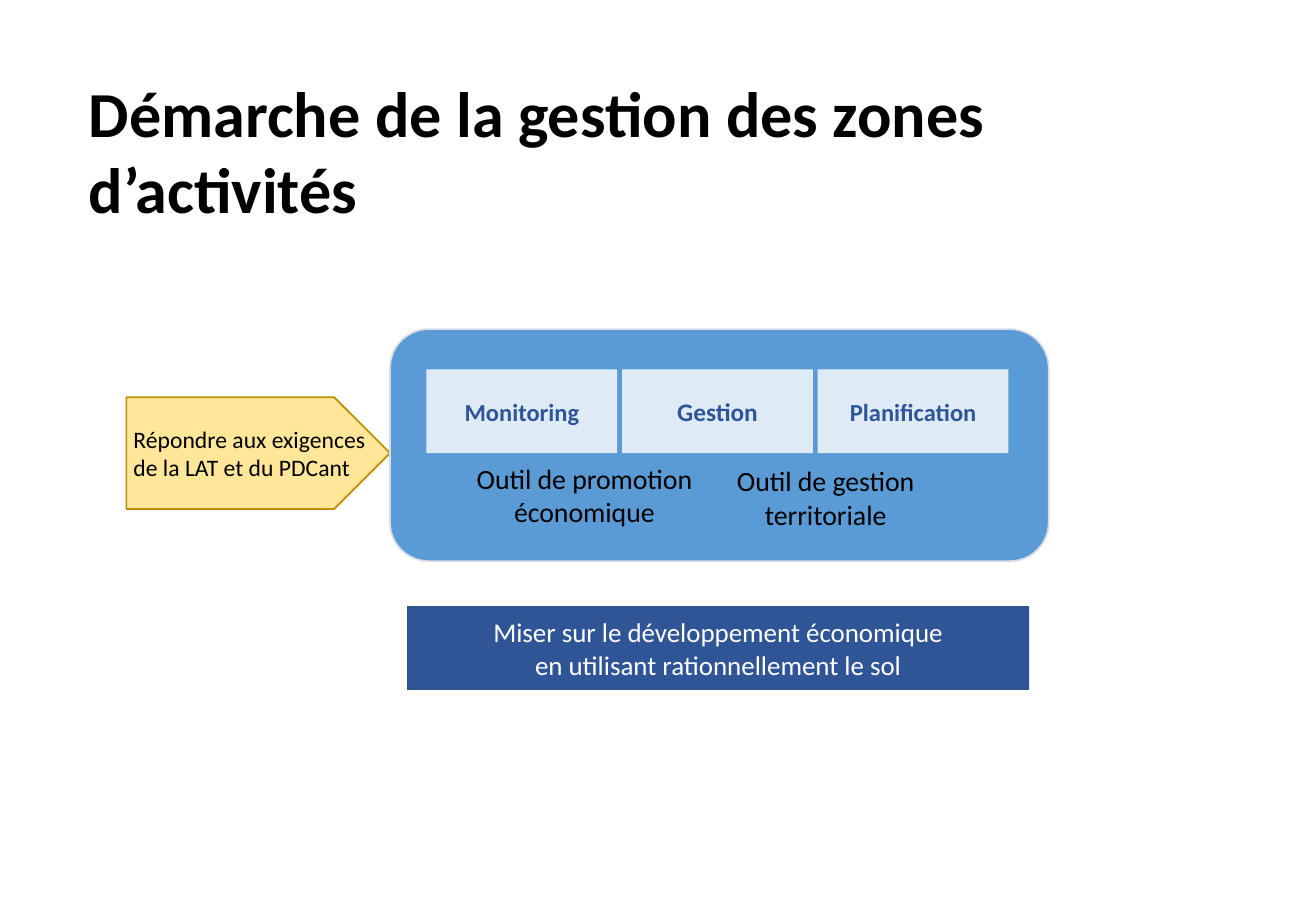
from dataclasses import dataclass
from typing import Any, Optional

import pptx
import pptx.dml.color
import pptx.enum.shapes
import pptx.enum.text
import pptx.util

EMU_PER_PX = 9144

Align = pptx.enum.text.PP_ALIGN
Anchor = pptx.enum.text.MSO_ANCHOR
Preset = pptx.enum.shapes.MSO_SHAPE


@dataclass(frozen=True)
class Theme:
    font: str = "Calibri"
    black: str = "000000"
    white: str = "FFFFFF"
    requirement_fill: str = "FFE699"
    requirement_line: str = "BD8E00"
    frame_fill: str = "5B9BD5"
    frame_line: str = "D6DCE5"
    step_fill: str = "DEEBF7"
    navy: str = "2F5597"
    title_size: float = 38
    step_size: float = 14.5
    middle_step_size: float = 15
    tool_size: float = 16.5
    requirement_size: float = 14
    goal_size: float = 16


@dataclass(frozen=True)
class Box:
    left: int
    top: int
    width: int
    height: int


@dataclass(frozen=True)
class Label:
    text: str
    size: float
    color: str
    bold: bool = False
    align: Any = Align.CENTER
    anchor: Any = Anchor.MIDDLE


@dataclass(frozen=True)
class Panel:
    preset: Any
    box: Box
    fill: str
    line: Optional[str] = None
    label: Optional[Label] = None


@dataclass(frozen=True)
class Caption:
    box: Box
    label: Label


def px(length: int) -> int:
    return pptx.util.Emu(length * EMU_PER_PX)


def bounds(box: Box) -> tuple[int, int, int, int]:
    return px(box.left), px(box.top), px(box.width), px(box.height)


def rgb(color: str) -> pptx.dml.color.RGBColor:
    return pptx.dml.color.RGBColor.from_string(color)


def write_label(frame: Any, label: Label, theme: Theme) -> None:
    frame.text = label.text
    frame.word_wrap = True
    frame.auto_size = pptx.enum.text.MSO_AUTO_SIZE.NONE
    frame.vertical_anchor = label.anchor
    for paragraph in frame.paragraphs:
        paragraph.alignment = label.align
        for run in paragraph.runs:
            run.font.name = theme.font
            run.font.size = pptx.util.Pt(label.size)
            run.font.bold = label.bold
            run.font.color.rgb = rgb(label.color)


def draw_panel(slide: Any, panel: Panel, theme: Theme) -> None:
    shape = slide.shapes.add_shape(panel.preset, *bounds(panel.box))
    shape.shadow.inherit = False
    shape.fill.solid()
    shape.fill.fore_color.rgb = rgb(panel.fill)
    if panel.line:
        shape.line.color.rgb = rgb(panel.line)
        shape.line.width = pptx.util.Pt(1)
    else:
        shape.line.fill.background()
    if panel.label:
        write_label(shape.text_frame, panel.label, theme)


def draw_caption(slide: Any, caption: Caption, theme: Theme) -> None:
    textbox = slide.shapes.add_textbox(*bounds(caption.box))
    write_label(textbox.text_frame, caption.label, theme)


def place_title(slide: Any, caption: Caption, theme: Theme) -> None:
    title = slide.shapes.title
    title.left, title.top, title.width, title.height = bounds(caption.box)
    write_label(title.text_frame, caption.label, theme)


def main() -> None:
    theme = Theme()
    presentation = pptx.Presentation()
    presentation.slide_width = px(1083)
    presentation.slide_height = px(750)
    slide = presentation.slides.add_slide(presentation.slide_layouts[5])

    heading = Caption(
        Box(63, 55, 978, 139),
        Label("Démarche de la gestion des zones d’activités", theme.title_size,
              theme.black, True, Align.LEFT, Anchor.TOP),
    )
    requirement_arrow = Panel(Preset.PENTAGON, Box(104, 327, 217, 92),
                              theme.requirement_fill, theme.requirement_line)
    process_frame = Panel(Preset.ROUNDED_RECTANGLE, Box(321, 271, 542, 191),
                          theme.frame_fill, theme.frame_line)
    step_names = [
        ("Monitoring", theme.step_size),
        ("Gestion", theme.middle_step_size),
        ("Planification", theme.step_size),
    ]
    step_pitch = 161
    steps = [
        Panel(Preset.RECTANGLE, Box(351 + index * step_pitch, 304, 157, 69),
              theme.step_fill, label=Label(name, size, theme.navy, True))
        for index, (name, size) in enumerate(step_names)
    ]
    goal = Panel(
        Preset.RECTANGLE, Box(335, 499, 512, 69), theme.navy,
        label=Label("Miser sur le développement économique\n"
                    "en utilisant rationnellement le sol",
                    theme.goal_size, theme.white),
    )
    captions = [
        Caption(Box(376, 375, 210, 66),
                Label("Outil de promotion économique", theme.tool_size,
                      theme.black, anchor=Anchor.TOP)),
        Caption(Box(586, 377, 187, 66),
                Label("Outil de gestion territoriale", theme.tool_size,
                      theme.black, anchor=Anchor.TOP)),
        Caption(Box(100, 345, 211, 57),
                Label("Répondre aux exigences\nde la LAT et du PDCant",
                      theme.requirement_size, theme.black,
                      align=Align.LEFT, anchor=Anchor.TOP)),
    ]

    place_title(slide, heading, theme)
    for panel in [requirement_arrow, process_frame, *steps, goal]:
        draw_panel(slide, panel, theme)
    for caption in captions:
        draw_caption(slide, caption, theme)

    presentation.save("out.pptx")


if __name__ == "__main__":
    main()
